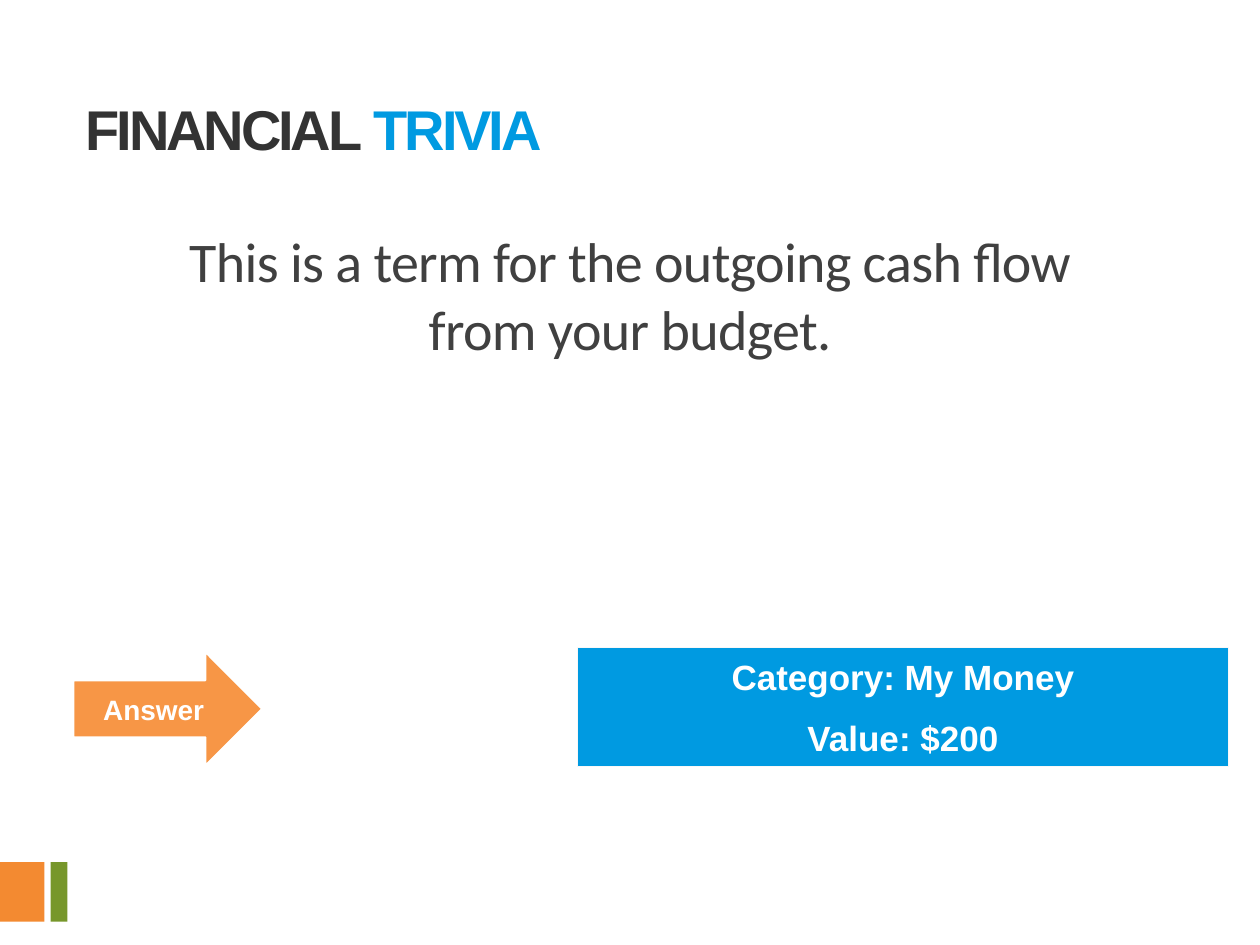
from dataclasses import dataclass

from pptx import Presentation
from pptx.dml.color import RGBColor
from pptx.enum.shapes import MSO_SHAPE
from pptx.enum.text import MSO_ANCHOR, PP_ALIGN
from pptx.util import Cm, Pt


@dataclass(frozen=True)
class Theme:
    """Colours, fonts and type sizes of the slide."""
    dark: str = "333333"
    body: str = "404040"
    blue: str = "009AE1"
    orange: str = "F38A31"
    green: str = "77972B"
    arrow: str = "F79646"
    white: str = "FFFFFF"
    edge: str = "F8F8F8"
    heading_font: str = "Arial"
    body_font: str = "Calibri"
    large: int = 32
    medium: int = 20
    small: int = 16


T = Theme()


def add_text(s, paragraphs, *, size, font=T.heading_font, bold=True, align=PP_ALIGN.CENTER,
             anchor=MSO_ANCHOR.MIDDLE, before=0, line=None, tracking=0):
    """Fill a shape with paragraphs, each a list of (text, colour) runs."""
    tf = s.text_frame
    tf.word_wrap = True
    tf.vertical_anchor = anchor
    for i, runs in enumerate(paragraphs):
        p = tf.paragraphs[0] if i == 0 else tf.add_paragraph()
        p.alignment = align
        p.space_before = Pt(before if i else 0)
        if line:
            p.line_spacing = line
        for text, colour in runs:
            r = p.add_run()
            r.text = text
            r.font.name = font
            r.font.size = Pt(size)
            r.font.bold = bold
            r.font.color.rgb = RGBColor.from_string(colour)
            if tracking:
                r._r.get_or_add_rPr().set("spc", str(round(tracking * 100)))


def add_block(sl, kind, box, fill, line=None, width=0):
    """Add a flat filled shape, outlined when a line colour is given."""
    s = sl.shapes.add_shape(kind, *map(Cm, box))
    s.shadow.inherit = False
    s.fill.solid()
    s.fill.fore_color.rgb = RGBColor.from_string(fill)
    if line:
        s.line.color.rgb = RGBColor.from_string(line)
        s.line.width = Pt(width)
    else:
        s.line.fill.background()
    return s


def add_corner_bars(sl, box):
    """Place the orange and green bars at the two ends of the box."""
    x, y, w, h = box
    wide, narrow = 0.66 * w, 0.25 * w
    add_block(sl, MSO_SHAPE.RECTANGLE, (x, y, wide, h), T.orange)
    add_block(sl, MSO_SHAPE.RECTANGLE, (x + w - narrow, y, narrow, h), T.green)


def add_title(sl, box):
    """Place the two-colour heading."""
    s = sl.shapes.add_textbox(*map(Cm, box))
    add_text(s, [[("FINANCIAL ", T.dark), ("TRIVIA", T.blue)]], size=T.large,
             align=PP_ALIGN.LEFT, line=0.9, tracking=-1.8)


def add_question(sl, box):
    """Place the trivia question."""
    s = sl.shapes.add_textbox(*map(Cm, box))
    lines = ["This is a term for the outgoing cash flow", "from your budget."]
    add_text(s, [[(text, T.body)] for text in lines], size=T.large, font=T.body_font,
             bold=False, anchor=MSO_ANCHOR.TOP, tracking=-0.4)


def add_category(sl, box):
    """Place the panel with the category and its value."""
    s = add_block(sl, MSO_SHAPE.RECTANGLE, box, T.blue, T.edge, 0.75)
    lines = ["Category: My Money", "Value: $200"]
    add_text(s, [[(text, T.white)] for text in lines], size=T.medium, before=11)


def add_answer(sl, box):
    """Place the arrow that leads to the answer."""
    s = add_block(sl, MSO_SHAPE.RIGHT_ARROW, box, T.arrow, T.white, 1.25)
    add_text(s, [[("Answer", T.white)]], size=T.small)


def main():
    """Build and save the slide."""
    prs = Presentation()
    prs.slide_width, prs.slide_height = Cm(25.4), Cm(19.05)
    sl = prs.slides.add_slide(prs.slide_layouts[6])
    add_corner_bars(sl, (0, 17.38, 1.36, 1.2))
    add_question(sl, (1.27, 4.45, 22.86, 12.57))
    add_category(sl, (11.64, 13.06, 13.13, 2.39))
    add_answer(sl, (1.48, 13.14, 3.81, 2.3))
    add_title(sl, (1.48, 1.91, 19.81, 1.5))
    prs.save("out.pptx")


if __name__ == "__main__":
    main()
